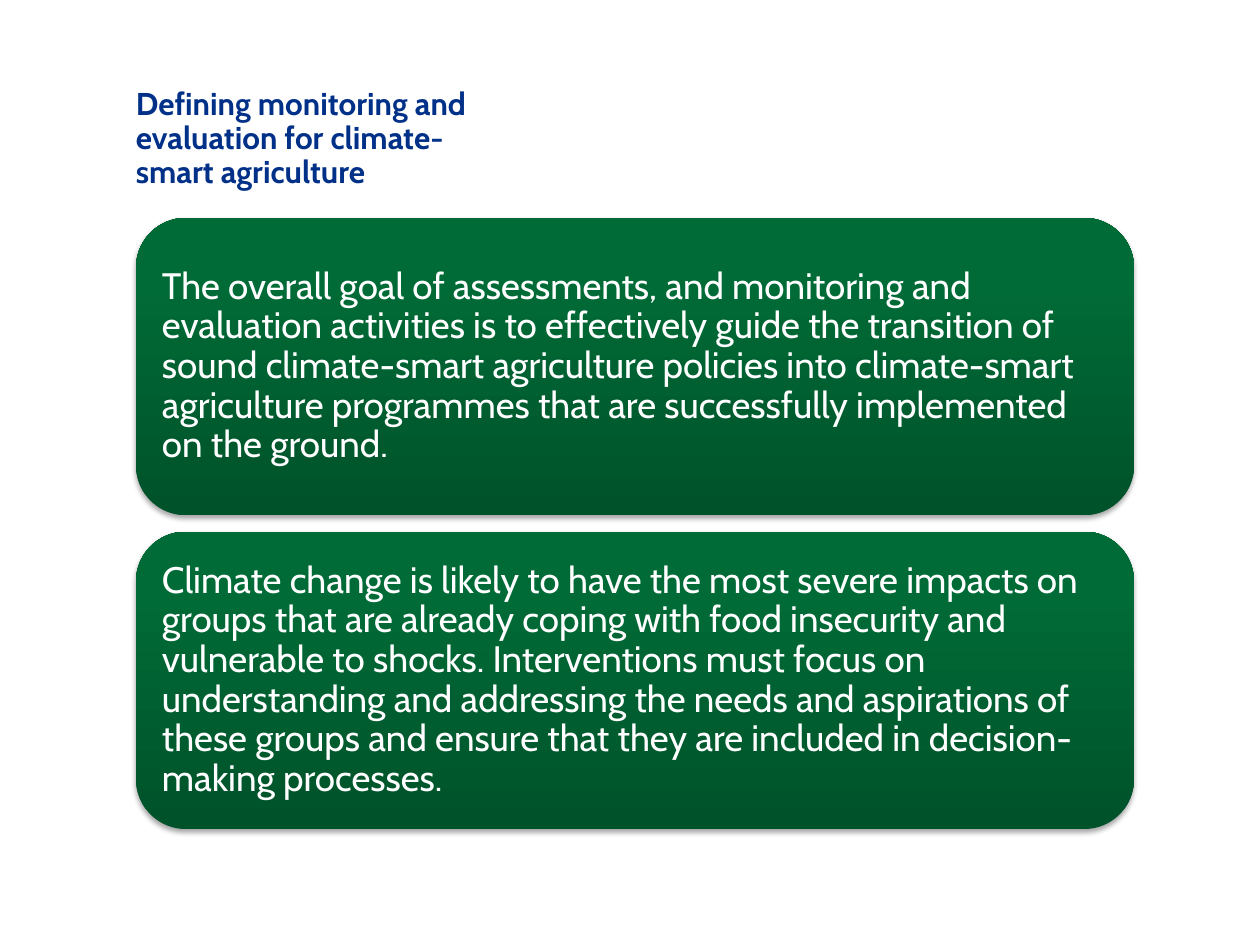
from copy import deepcopy
from dataclasses import dataclass

from lxml.etree import SubElement
from pptx import Presentation
from pptx.dml.color import RGBColor as RGB
from pptx.enum.shapes import MSO_SHAPE as SHAPE
from pptx.enum.text import MSO_ANCHOR as ANCHOR, PP_ALIGN as ALIGN
from pptx.oxml.ns import qn
from pptx.util import Inches, Pt


@dataclass(frozen=True)
class Theme:
    font: str = "Cabin"
    title_size: int = 18
    body_size: int = 21
    title: str = "003087"
    body: str = "FFFFFF"
    shadow: str = "000000"
    gradient: tuple = ((0, "00522A"), (0.8, "006B36"), (1, "006B37"))


THEME = Theme()
TITLE = "Defining monitoring and evaluation for climate-smart agriculture"
MESSAGES = (
    "The overall goal of assessments, and monitoring and evaluation activities "
    "is to effectively guide the transition of sound climate-smart agriculture "
    "policies into climate-smart agriculture programmes that are successfully "
    "implemented on the ground.",
    "Climate change is likely to have the most severe impacts on groups that "
    "are already coping with food insecurity and vulnerable to shocks. "
    "Interventions must focus on understanding and addressing the needs and "
    "aspirations of these groups and ensure that they are included in "
    "decision-making processes.",
)
CARD_LEFT, CARD_TOP, CARD_WIDTH, CARD_HEIGHT, CARD_GAP = 1.08, 1.73, 7.92, 2.36, 0.13


def write_text(sp, text, size, color, bold=False, anchor=ANCHOR.MIDDLE, inset=(0.09, 0.09)):
    tf = sp.text_frame
    tf.word_wrap = True
    tf.vertical_anchor = anchor
    tf.margin_left = tf.margin_right = Inches(inset[0])
    tf.margin_top = tf.margin_bottom = Inches(inset[1])
    p = tf.paragraphs[0]
    p.alignment = ALIGN.LEFT
    p.line_spacing = 0.9
    r = p.add_run()
    r.text = text
    r.font.name = THEME.font
    r.font.size = Pt(size)
    r.font.bold = bold
    r.font.color.rgb = RGB.from_string(color)


def fill_gradient(sp):
    sp.fill.gradient()
    sp.fill.gradient_angle = 90
    stops = sp._element.spPr.find(".//" + qn("a:gsLst"))
    stops.append(deepcopy(stops[-1]))
    for stop, (position, color) in zip(sp.fill.gradient_stops, THEME.gradient):
        stop.position = position
        stop.color.rgb = RGB.from_string(color)


def add_shadow(sp):
    sp.shadow.inherit = False
    effects = sp._element.spPr.find(qn("a:effectLst"))
    shadow = SubElement(effects, qn("a:outerShdw"), blurRad=str(Pt(3.1)),
                        dist=str(Pt(1.8)), dir="5400000", rotWithShape="0")
    color = SubElement(shadow, qn("a:srgbClr"), val=THEME.shadow)
    SubElement(color, qn("a:alpha"), val="35000")


def add_title(s, text):
    sp = s.shapes.add_textbox(Inches(0.98), Inches(0.29), Inches(2.97), Inches(1.27))
    write_text(sp, text, THEME.title_size, THEME.title, bold=True,
               anchor=ANCHOR.BOTTOM, inset=(0.1, 0.05))


def add_card(s, top, text):
    sp = s.shapes.add_shape(SHAPE.ROUNDED_RECTANGLE, Inches(CARD_LEFT), Inches(top),
                            Inches(CARD_WIDTH), Inches(CARD_HEIGHT))
    fill_gradient(sp)
    sp.line.fill.background()
    add_shadow(sp)
    write_text(sp, text, THEME.body_size, THEME.body)


def main():
    prs = Presentation()
    prs.slide_width, prs.slide_height = Inches(10), Inches(7.5)
    s = prs.slides.add_slide(prs.slide_layouts[6])
    add_title(s, TITLE)
    for i, message in enumerate(MESSAGES):
        add_card(s, CARD_TOP + i * (CARD_HEIGHT + CARD_GAP), message)
    prs.save("out.pptx")


if __name__ == "__main__":
    main()
